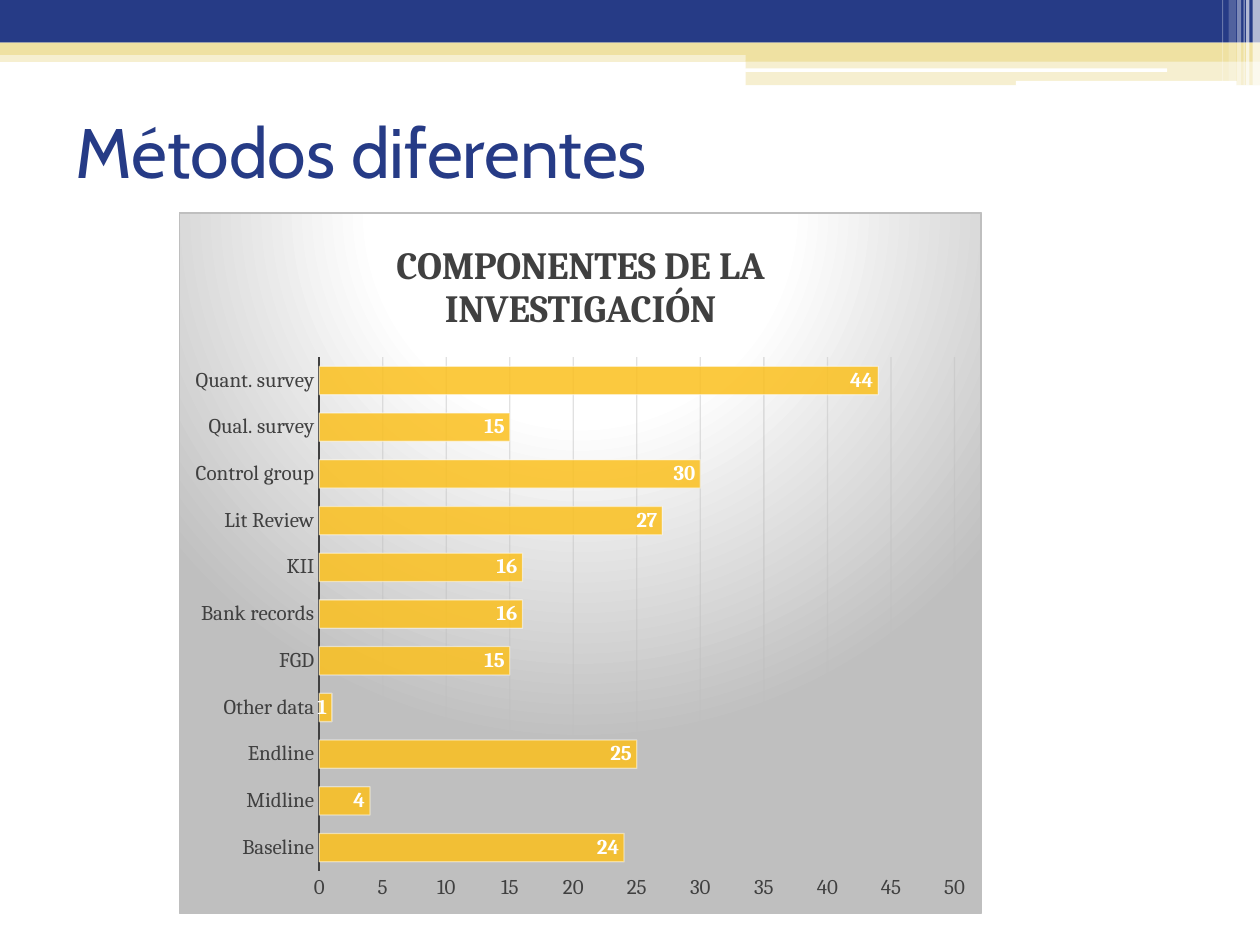
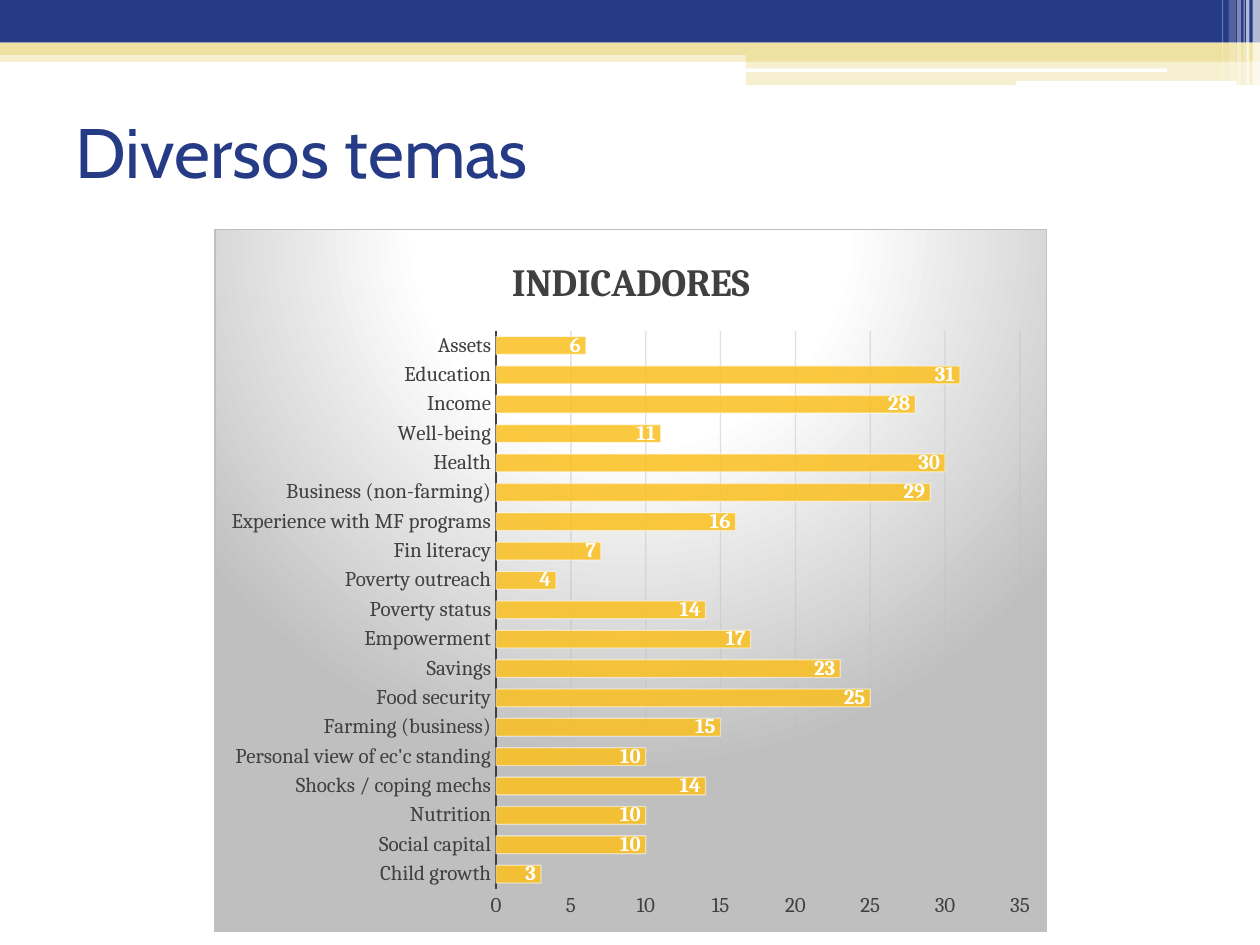
from lxml import etree
from pptx import Presentation
from pptx import util as u
from pptx.chart.data import CategoryChartData
from pptx.dml.color import RGBColor
from pptx.enum import chart as ch, shapes, text
from pptx.oxml import parse_xml
from pptx.oxml.ns import nsdecls, qn

# Content: values run from the bottom bar to the top bar
SLIDES = [
    dict(title="Métodos diferentes", heading="COMPONENTES DE LA INVESTIGACIÓN",
         box=(3.61, 4.28, 16.18, 14.15), top_value=50,
         values={"Baseline": 24, "Midline": 4, "Endline": 25, "Other data": 1,
                 "FGD": 15, "Bank records": 16, "KII": 16, "Lit Review": 27,
                 "Control group": 30, "Qual. survey": 15, "Quant. survey": 44}),
    dict(title="Diversos temas", heading="INDICADORES",
         box=(4.32, 4.62, 16.79, 14.17), top_value=35,
         values={"Child growth": 3, "Social capital": 10, "Nutrition": 10,
                 "Shocks / coping mechs": 14, "Personal view of ec'c standing": 10,
                 "Farming (business)": 15, "Food security": 25, "Savings": 23,
                 "Empowerment": 17, "Poverty status": 14, "Poverty outreach": 4,
                 "Fin literacy": 7, "Experience with MF programs": 16,
                 "Business (non-farming)": 29, "Health": 30, "Well-being": 11,
                 "Income": 28, "Education": 31, "Assets": 6}),
]

# Shared style
COLORS = dict(navy="263B86", sand="EFE1A2", white="FFFFFF", gold="FBC01E",
              ink="404040", black="000000", grey="BFBFBF")
TITLE_FONT, CHART_FONT = "Cabin", "Cambria"
WIDTH, HEIGHT = 25.4, 19.05
TITLE_BOX = (1.27, 1.85, 22.86, 2.36)

# Bands: left, top, width, height, colour, opacity in percent
BANDS = [
    (0, 1.02, WIDTH, 0.23, "sand", 50),
    (0, 0, WIDTH, 0.86, "navy", 100),
    (0, 0.86, WIDTH, 0.25, "sand", 100),
    (15.03, 0.99, 10.37, 0.25, "sand", 100),
    (15.03, 1.22, 10.37, 0.5, "sand", 50),
]
ROUNDED_BANDS = [
    (15.02, 1.38, 8.51, 0.07, "white", 100),
    (20.48, 1.63, 4.45, 0.1, "white", 100),
]
# Corner stripes: left, width, height, opacity
STRIPES = [(25.25, 0.15, 1.73, 65), (25.12, 0.07, 1.73, 65), (25.07, 0.02, 1.73, 60),
           (24.94, 0.08, 1.73, 40), (24.77, 0.15, 1.63, 20), (24.64, 0.02, 1.63, 30)]


def rgb(name):
    return RGBColor.from_string(COLORS[name])


def cm(box):
    return [u.Cm(v) for v in box]


def paint(fill, color, opacity=100):
    fill.solid()
    fill.fore_color.rgb = rgb(color)
    if opacity < 100:
        clr = fill._xPr.find(qn("a:solidFill")).find(qn("a:srgbClr"))
        etree.SubElement(clr, qn("a:alpha")).set("val", str(opacity * 1000))


def style(font, size, color, name=CHART_FONT, bold=False):
    font.size, font.name, font.bold = u.Pt(size), name, bold
    font.color.rgb = rgb(color)


def write(tf, words, align=None, **fmt):
    p = tf.paragraphs[0]
    p.alignment = align
    r = p.add_run()
    r.text = words
    style(r.font, **fmt)


def add_bands(slide, layout):
    """Draw the header once and move it to the layout, behind the title."""
    kinds = shapes.MSO_SHAPE
    parts = [(kinds.RECTANGLE, *b) for b in BANDS]
    parts += [(kinds.ROUNDED_RECTANGLE, *b) for b in ROUNDED_BANDS]
    parts += [(kinds.RECTANGLE, x, 0, w, h, "white", a) for x, w, h, a in STRIPES]
    for i, (kind, *box, color, opacity) in enumerate(parts):
        sp = slide.shapes.add_shape(kind, *cm(box))
        sp.shadow.inherit = False
        sp.line.fill.background()
        paint(sp.fill, color, opacity)
        sp.element.nvSpPr.cNvPr.set("id", str(100 + i))
        layout.shapes.element.insert(2 + i, sp.element)


def add_title(slide, words):
    sp = slide.shapes.title
    sp.left, sp.top, sp.width, sp.height = cm(TITLE_BOX)
    tf = sp.text_frame
    tf.auto_size = text.MSO_AUTO_SIZE.NONE
    tf.vertical_anchor = text.MSO_ANCHOR.MIDDLE
    write(tf, words, align=text.PP_ALIGN.LEFT, size=40, color="navy", name=TITLE_FONT)


def fill_chart_area(chart):
    stops = "".join(f'<a:gs pos="{pos * 1000}"><a:srgbClr val="{COLORS[c]}"/></a:gs>'
                    for pos, c in [(0, "white"), (39, "white"), (100, "grey")])
    area = parse_xml(
        f'<c:spPr {nsdecls("c", "a")}><a:gradFill><a:gsLst>{stops}</a:gsLst>'
        '<a:path path="circle"><a:fillToRect l="50000" t="-80000" r="50000" b="180000"/>'
        f'</a:path></a:gradFill><a:ln w="{u.Pt(0.75)}"><a:solidFill>'
        f'<a:srgbClr val="{COLORS["grey"]}"/></a:solidFill></a:ln></c:spPr>')
    chart._chartSpace.find(qn("c:txPr")).addprevious(area)


def add_bar_chart(slide, heading, box, values, top_value):
    data = CategoryChartData()
    data.categories = list(values)
    data.add_series("Series 1", list(values.values()))
    chart = slide.shapes.add_chart(ch.XL_CHART_TYPE.BAR_CLUSTERED, *cm(box), data).chart
    style(chart.font, 10, "black")
    fill_chart_area(chart)
    chart.has_legend = False
    chart.has_title = True
    chart.chart_title.include_in_layout = False
    write(chart.chart_title.text_frame, heading, size=22, color="ink", bold=True)

    # Axes
    for axis in (chart.category_axis, chart.value_axis):
        axis.major_tick_mark = axis.minor_tick_mark = ch.XL_TICK_MARK.NONE
        style(axis.tick_labels.font, 12, "ink")
    cats, vals = chart.category_axis, chart.value_axis
    cats.has_major_gridlines = False
    paint(cats.format.line.fill, "ink")
    cats.format.line.width = u.Pt(1.5)
    vals.minimum_scale, vals.maximum_scale, vals.major_unit = 0, top_value, 5
    vals.format.line.fill.background()
    vals.has_major_gridlines = True
    grid = vals.major_gridlines.format.line
    paint(grid.fill, "grey", 45)
    grid.width = u.Pt(0.75)

    # Bars and their labels
    plot = chart.plots[0]
    plot.gap_width = 65
    plot.vary_by_categories = False
    bars = plot.series[0]
    bars.invert_if_negative = False
    paint(bars.format.fill, "gold", 85)
    paint(bars.format.line.fill, "white", 50)
    bars.format.line.width = u.Pt(0.75)
    labels = bars.data_labels
    labels.show_value = True
    labels.position = ch.XL_LABEL_POSITION.INSIDE_END
    style(labels.font, 12, "white", bold=True)


def main():
    prs = Presentation()
    prs.slide_width, prs.slide_height = u.Cm(WIDTH), u.Cm(HEIGHT)
    layout = prs.slide_layouts.get_by_name("Title Only")
    for i, content in enumerate(SLIDES):
        s = prs.slides.add_slide(layout)
        if i == 0:
            add_bands(s, layout)
        add_title(s, content["title"])
        add_bar_chart(s, content["heading"], content["box"],
                      content["values"], content["top_value"])
    prs.save("out.pptx")


if __name__ == "__main__":
    main()
